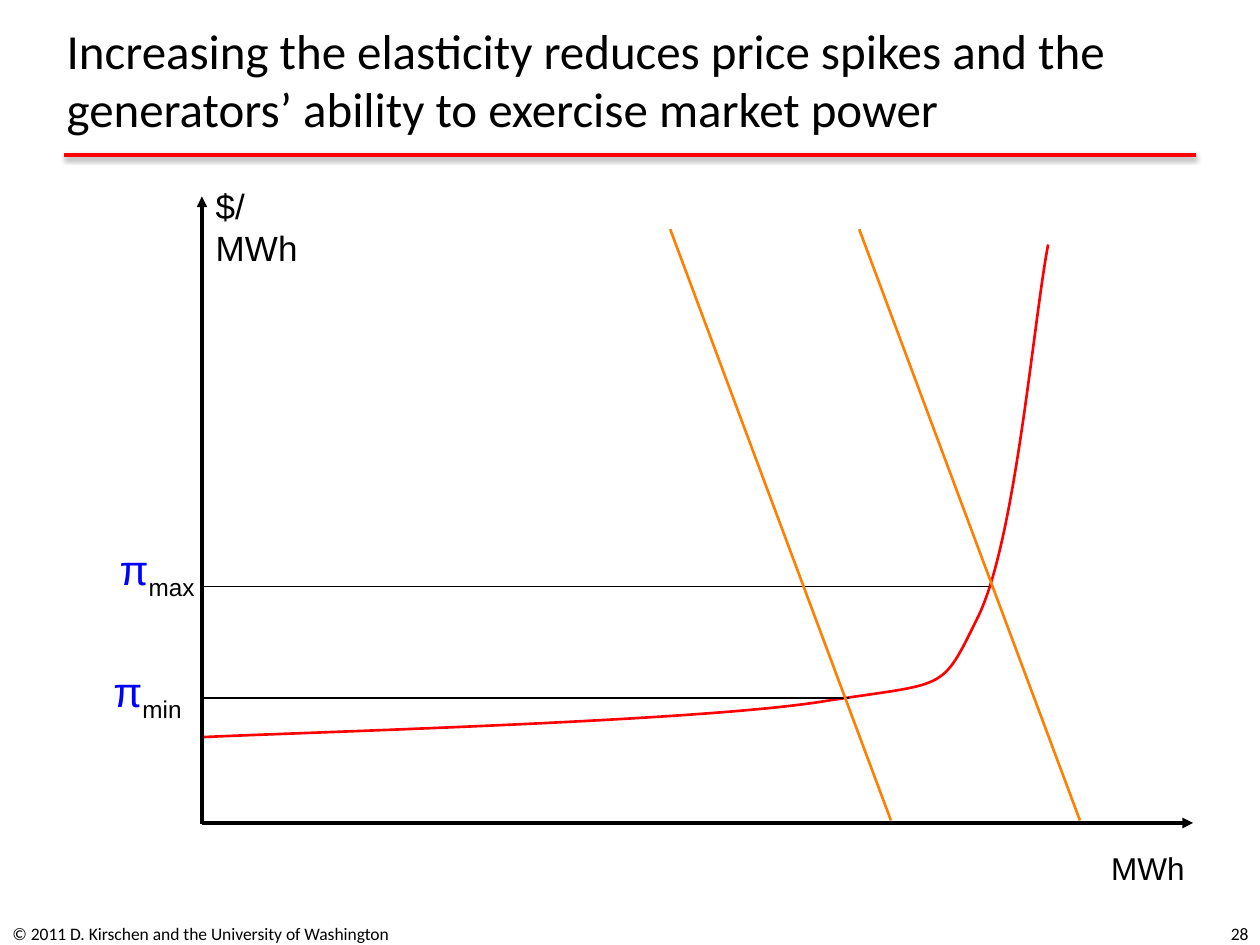
"""Build a slide on demand elasticity, price spikes and market power."""
from dataclasses import dataclass

from lxml import etree
from pptx import Presentation
from pptx.dml.color import RGBColor
from pptx.enum.text import MSO_ANCHOR, MSO_AUTO_SIZE, PP_ALIGN
from pptx.enum.shapes import MSO_CONNECTOR
from pptx.oxml.ns import qn
from pptx.util import Cm, Pt

LEFT, CENTER, RIGHT = PP_ALIGN.LEFT, PP_ALIGN.CENTER, PP_ALIGN.RIGHT
TOP, MIDDLE = MSO_ANCHOR.TOP, MSO_ANCHOR.MIDDLE
STRAIGHT = MSO_CONNECTOR.STRAIGHT
NO_AUTOFIT, GROW = MSO_AUTO_SIZE.NONE, MSO_AUTO_SIZE.SHAPE_TO_FIT_TEXT
TITLE_ONLY = 5
COLORS = {"black": "000000", "supply": "FF0000", "demand": "FF8000", "price": "0000FF"}
ORIGIN_X = 4.07
DEMAND_SHIFT = 3.81
SUPPLY_CURVE = [
    (4.09, 14.86),
    (6.17, 14.76), (13.94, 14.55), (16.53, 14.15),
    (19.13, 13.74), (18.95, 13.99), (19.71, 12.45),
    (20.47, 10.92), (20.83, 6.5), (21.13, 4.93),
]


@dataclass
class Line:
    start: tuple[float, float]
    end: tuple[float, float]
    color: str = "black"
    width: float = 0.75
    arrow: bool = False
    shadow: bool = False


@dataclass
class Label:
    text: str
    left: float
    top: float
    width: float
    height: float
    size: float
    font: str = "Arial"
    align: PP_ALIGN = LEFT
    anchor: MSO_ANCHOR = TOP
    wrap: bool = False


@dataclass
class PriceLabel:
    box: Label
    subscript: str


LINES = [
    Line((1.3, 3.12), (24.1, 3.12), "supply", 2, shadow=True),
    Line((ORIGIN_X, 16.59), (24.05, 16.59), width=2, arrow=True),
    Line((ORIGIN_X, 16.61), (ORIGIN_X, 3.96), width=2, arrow=True),
    Line((19.94, 11.82), (ORIGIN_X, 11.82)),
    Line((17.12, 14.07), (ORIGIN_X, 14.07)),
] + [
    Line((21.77 - shift, 16.54), (17.32 - shift, 4.62), "demand", 1.5)
    for shift in (0, DEMAND_SHIFT)
]
LABELS = [
    Label("© 2011 D. Kirschen and the University of Washington",
          0, 18.31, 10.9, 1.02, 10, "Calibri", anchor=MIDDLE, wrap=True),
    Label("28", 19.5, 18.31, 5.92, 1.02, 10, "Calibri", RIGHT, MIDDLE, True),
    Label("$/MWh", 4.1, 3.6, 2.4, 1.09, 20, wrap=True),
    Label("MWh", 22.15, 16.99, 2.2, 1.02, 18),
]
PRICE_LABELS = [
    PriceLabel(Label("π", 1.96, 13.36, 2.03, 1.27, 24, align=CENTER, anchor=MIDDLE), "min"),
    PriceLabel(Label("π", 2.08, 10.9, 2.18, 1.27, 24, align=CENTER, anchor=MIDDLE), "max"),
]


def rgb(name: str) -> RGBColor:
    return RGBColor.from_string(COLORS[name])


def style_span(span, size: float, font: str, color: str = "black") -> None:
    span.font.size = Pt(size)
    span.font.name = font
    span.font.color.rgb = rgb(color)


def add_shadow(effects) -> None:
    shadow = etree.SubElement(effects, qn("a:outerShdw"), blurRad=str(Pt(3.1)),
                              dist=str(Pt(1.6)), dir="5400000", rotWithShape="0")
    color = etree.SubElement(shadow, qn("a:srgbClr"), val=COLORS["black"])
    etree.SubElement(color, qn("a:alpha"), val="38000")


def draw_line(page, line: Line) -> None:
    connector = page.shapes.add_connector(STRAIGHT, *map(Cm, line.start + line.end))
    connector.line.color.rgb = rgb(line.color)
    connector.line.width = Pt(line.width)
    properties = connector.element.spPr
    if line.arrow:
        etree.SubElement(properties.find(qn("a:ln")), qn("a:tailEnd"), type="triangle")
    effects = etree.SubElement(properties, qn("a:effectLst"))
    if line.shadow:
        add_shadow(effects)


def draw_supply(page) -> None:
    (start_x, start_y), *points = SUPPLY_CURVE
    builder = page.shapes.build_freeform(Cm(start_x), Cm(start_y))
    builder.add_line_segments([(Cm(x), Cm(y)) for x, y in points], close=False)
    curve = builder.convert_to_shape()
    curve.shadow.inherit = False
    curve.fill.background()
    curve.line.color.rgb = rgb("supply")
    curve.line.width = Pt(1.5)
    segments = list(curve.element.iter(qn("a:lnTo")))
    outline = segments[0].getparent()
    for index in range(0, len(segments), 3):
        bezier = etree.SubElement(outline, qn("a:cubicBezTo"))
        for segment in segments[index:index + 3]:
            bezier.append(segment[0])
            outline.remove(segment)


def draw_label(page, label: Label, color: str = "black"):
    box = page.shapes.add_textbox(*map(Cm, (label.left, label.top, label.width, label.height)))
    frame = box.text_frame
    frame.word_wrap = label.wrap
    frame.auto_size = NO_AUTOFIT if label.wrap else GROW
    frame.vertical_anchor = label.anchor
    frame.text = label.text
    para = frame.paragraphs[0]
    para.alignment = label.align
    style_span(para.runs[0], label.size, label.font, color)
    return para


def draw_price_label(page, label: PriceLabel) -> None:
    para = draw_label(page, label.box, "price")
    span = para.add_run()
    span.text = label.subscript
    style_span(span, label.box.size, label.box.font)
    span.font._element.set("baseline", "-25000")


def draw_title(page, text: str) -> None:
    title = page.shapes.title
    title.left, title.top, title.width, title.height = map(Cm, (1.09, 0.64, 23.75, 1.9))
    frame = title.text_frame
    frame.text = text
    frame.word_wrap = True
    frame.auto_size = NO_AUTOFIT
    frame.vertical_anchor = MIDDLE
    para = frame.paragraphs[0]
    para.alignment = LEFT
    style_span(para.runs[0], 28, "Calibri")


def main() -> None:
    deck = Presentation()
    deck.slide_width, deck.slide_height = Cm(25.4), Cm(19.05)
    page = deck.slides.add_slide(deck.slide_layouts[TITLE_ONLY])
    draw_title(page, "Increasing the elasticity reduces price spikes and the "
                     "generators’ ability to exercise market power")
    draw_supply(page)
    for line in LINES:
        draw_line(page, line)
    for label in LABELS:
        draw_label(page, label)
    for price_label in PRICE_LABELS:
        draw_price_label(page, price_label)
    deck.save("out.pptx")


if __name__ == "__main__":
    main()
